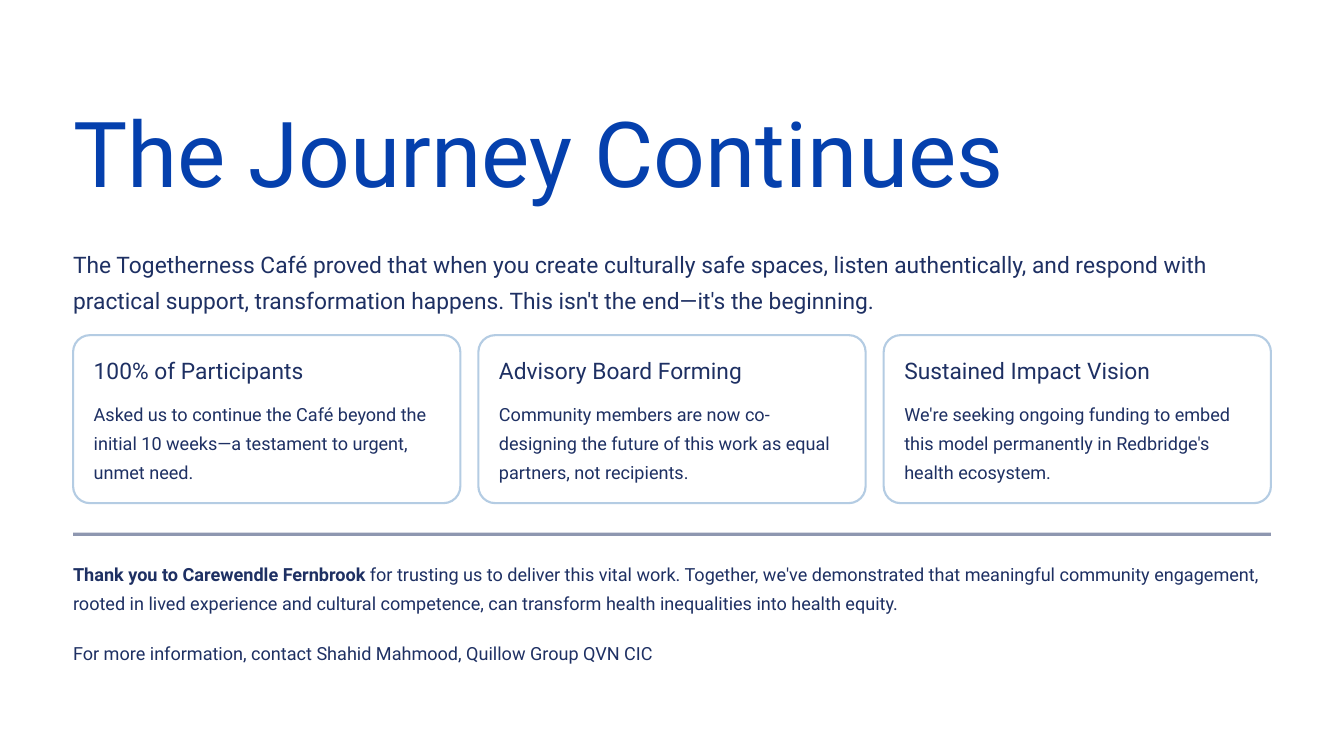
from lxml import etree
from pptx import Presentation
from pptx.dml.color import RGBColor
from pptx.enum.shapes import MSO_SHAPE
from pptx.oxml.ns import qn
from pptx.util import Inches, Pt

COLORS = {"title": "0540AD", "ink": "1E3063", "border": "B4CCE3", "white": "FFFFFF"}
LEFT, WIDTH = 0.87, 14.26
CARD_WIDTH, CARD_STEP, CARD_PAD = 4.61, 4.825, 0.245

presentation = Presentation()
presentation.slide_width = Inches(16)
presentation.slide_height = Inches(9)
slide = presentation.slides.add_slide(presentation.slide_layouts[6])
slide.background.fill.solid()
slide.background.fill.fore_color.rgb = RGBColor.from_string(COLORS["white"])


def add_text(text, left, top, width, height, size=15.5, spacing=25,
             color="ink", wrap=True, bold_lead=""):
    frame = slide.shapes.add_textbox(
        Inches(left), Inches(top), Inches(width), Inches(height)).text_frame
    frame.word_wrap = wrap
    frame.margin_left = frame.margin_right = frame.margin_top = frame.margin_bottom = 0
    paragraph = frame.paragraphs[0]
    paragraph.line_spacing = Pt(spacing)
    for part, bold in ((bold_lead, True), (text, False)):
        if part:
            run = paragraph.add_run()
            run.text = part
            run.font.name = "Roboto"
            run.font.size = Pt(size)
            run.font.bold = bold
            run.font.color.rgb = RGBColor.from_string(COLORS[color])


def add_panel(kind, left, top, width, height, fill):
    panel = slide.shapes.add_shape(
        kind, Inches(left), Inches(top), Inches(width), Inches(height))
    panel.shadow.inherit = False
    panel.fill.solid()
    panel.fill.fore_color.rgb = RGBColor.from_string(COLORS[fill])
    panel.line.fill.background()
    return panel


add_text("The Journey Continues", LEFT, 1.09, 11.74, 1.36,
         size=78, spacing=97.5, color="title", wrap=False)
add_text("The Togetherness Café proved that when you create culturally safe spaces, "
         "listen authentically, and respond with practical support, transformation "
         "happens. This isn't the end—it's the beginning.",
         LEFT, 2.88, WIDTH, 0.87, size=19.5, spacing=31)

next_steps = [
    ("100% of Participants",
     "Asked us to continue the Café beyond the initial 10 weeks—a testament to urgent, "
     "unmet need."),
    ("Advisory Board Forming",
     "Community members are now co-designing the future of this work as equal partners, "
     "not recipients."),
    ("Sustained Impact Vision",
     "We're seeking ongoing funding to embed this model permanently in Redbridge's "
     "health ecosystem."),
]
for index, (heading, detail) in enumerate(next_steps):
    card_left = LEFT + index * CARD_STEP
    card = add_panel(MSO_SHAPE.ROUNDED_RECTANGLE, card_left, 3.99, CARD_WIDTH, 2, "white")
    card.adjustments[0] = 0.1
    card.line.color.rgb = RGBColor.from_string(COLORS["border"])
    card.line.width = Pt(1.8)
    text_left = card_left + CARD_PAD
    text_width = CARD_WIDTH - 2 * CARD_PAD
    add_text(heading, text_left, 4.24, text_width, 0.34, size=19.5, spacing=24, wrap=False)
    add_text(detail, text_left, 4.71, text_width, 1.04)

divider = add_panel(MSO_SHAPE.RECTANGLE, LEFT, 6.34, WIDTH, 0.04, "ink")
divider_color = divider.fill._xPr.find(qn("a:solidFill")).find(qn("a:srgbClr"))
etree.SubElement(divider_color, qn("a:alpha")).set("val", "50000")

add_text(" for trusting us to deliver this vital work. Together, we've demonstrated that "
         "meaningful community engagement, rooted in lived experience and cultural "
         "competence, can transform health inequalities into health equity.",
         LEFT, 6.62, WIDTH, 0.69, bold_lead="Thank you to Carewendle Fernbrook")
add_text("For more information, contact Shahid Mahmood, Quillow Group QVN CIC",
         LEFT, 7.56, WIDTH, 0.35, wrap=False)

presentation.save("out.pptx")
